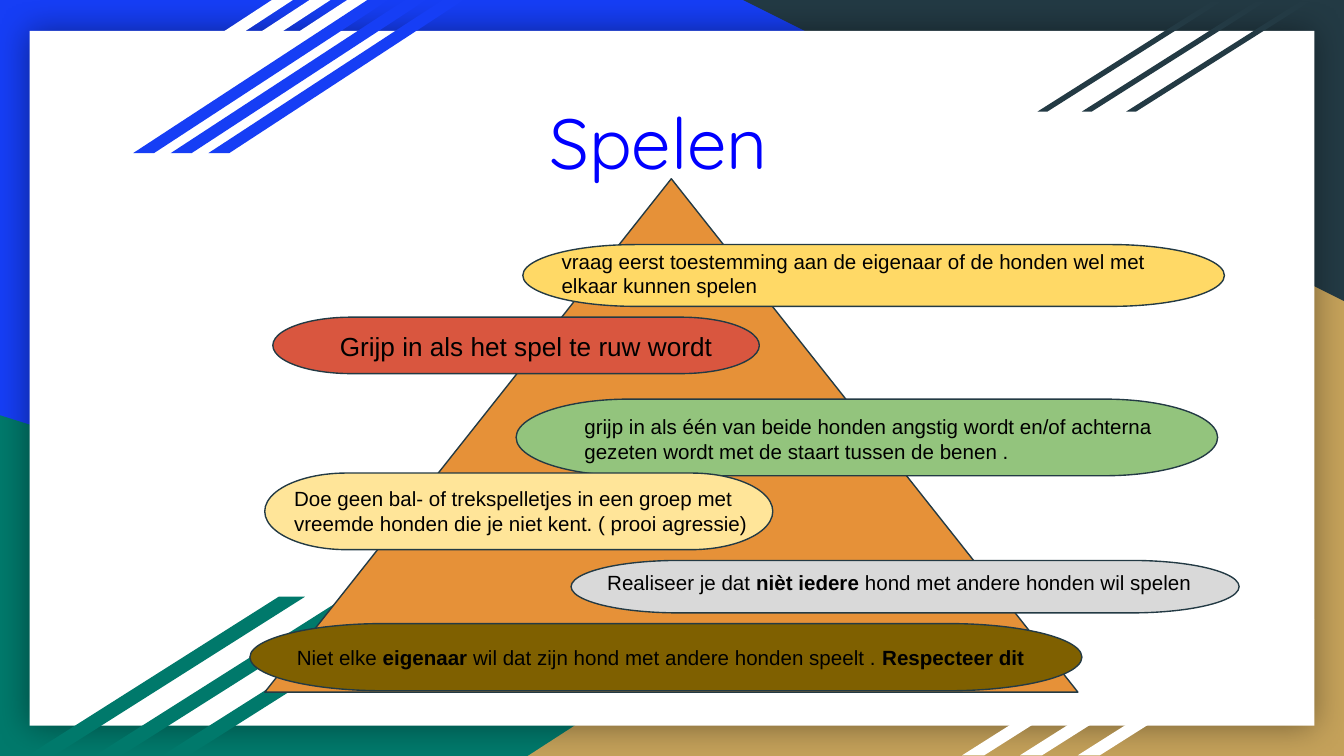
import pptx
import pptx.util
import pptx.dml.color
import pptx.enum.shapes
import pptx.enum.text
import pptx.oxml
import pptx.oxml.ns

Inches = pptx.util.Inches
Pt = pptx.util.Pt
RGBColor = pptx.dml.color.RGBColor
Kind = pptx.enum.shapes.MSO_SHAPE
Align = pptx.enum.text.PP_ALIGN
Anchor = pptx.enum.text.MSO_ANCHOR

BLUE = RGBColor(0x16, 0x3E, 0xF5)
TEAL = RGBColor(0x00, 0x79, 0x6B)
SAND = RGBColor(0xC4, 0xA1, 0x5A)
SLATE = RGBColor(0x23, 0x3A, 0x44)
WHITE = RGBColor(0xFF, 0xFF, 0xFF)
BLACK = RGBColor(0x00, 0x00, 0x00)
TITLE = RGBColor(0x00, 0x00, 0xFF)
ORANGE = RGBColor(0xE6, 0x91, 0x38)
YELLOW = RGBColor(0xFF, 0xD9, 0x66)
RED = RGBColor(0xD9, 0x56, 0x3F)
GREEN = RGBColor(0x93, 0xC4, 0x7D)
CREAM = RGBColor(0xFF, 0xE5, 0x99)
GREY = RGBColor(0xD9, 0xD9, 0xD9)
BROWN = RGBColor(0x7F, 0x60, 0x00)

# Widescreen slide, 16 to 9
deck = pptx.Presentation()
deck.slide_width = Inches(10)
deck.slide_height = Inches(10 * 9 / 16)
slide = deck.slides.add_slide(deck.slide_layouts[6])
slide.background.fill.solid()
slide.background.fill.fore_color.rgb = BLUE


def add_form(kind, box, fill, edge=None):
    form = slide.shapes.add_shape(kind, *[Inches(n) for n in box])
    form.shadow.inherit = False
    form.fill.solid()
    form.fill.fore_color.rgb = fill
    if edge is None:
        form.line.fill.background()
    else:
        form.line.color.rgb = edge
        form.line.width = Pt(0.75)
    return form


def add_text(box, text, font, size, color):
    """Write text in a box; parts between asterisks are bold."""
    frame = slide.shapes.add_textbox(*[Inches(n) for n in box]).text_frame
    frame.word_wrap = True
    frame.margin_left = frame.margin_right = Inches(0.1)
    frame.margin_top = frame.margin_bottom = Inches(0.1)
    para = frame.paragraphs[0]
    para.font.name = font
    para.font.size = Pt(size)
    para.font.color.rgb = color
    for i, part in enumerate(text.split("*")):
        if part:
            run = para.add_run()
            run.text = part
            if i % 2:
                run.font.bold = True
    return frame


# Coloured corners
add_form(Kind.RIGHT_TRIANGLE, (0, 3.09, 8.06, 2.54), TEAL)
sand = add_form(Kind.RIGHT_TRIANGLE, (3.92, 1.7, 6.08, 3.93), SAND)
sand.element.spPr.xfrm.set("flipH", "1")
slate = add_form(Kind.RIGHT_TRIANGLE, (5.53, 0, 4.47, 2.24), SLATE)
slate.rotation = 180

# White panel with a soft shadow
panel = add_form(Kind.RECTANGLE, (0.22, 0.23, 9.56, 5.17), WHITE)
glow = pptx.oxml.parse_xml(
    f'<a:outerShdw {pptx.oxml.ns.nsdecls("a")} blurRad="{Pt(18)}" dist="0" '
    'algn="ctr" rotWithShape="0"><a:srgbClr val="000000">'
    '<a:alpha val="40000"/></a:srgbClr></a:outerShdw>')
panel.element.spPr.find(pptx.oxml.ns.qn("a:effectLst")).append(glow)

# Slanted stripes, three to a group, from right to left
stripes = [
    (0.84, 0, 1.9, 1.14, 0.28, 1.53, WHITE),
    (1.55, 0, 1.9, 1.14, 0.28, 1.53, BLUE),
    (8.38, 0.01, 1.37, 0.82, 0.33, 1.58, SLATE),
    (8.02, 4.61, 1.76, 1.01, 0.43, 1.58, WHITE),
    (1.21, 4.44, 2.06, 1.18, 0.5, 1.58, TEAL),
]
for left, top, wide, high, step, slant, fill in stripes:
    for i in range(3):
        box = (left - i * step, top, wide, high)
        bar = add_form(Kind.PARALLELOGRAM, box, fill)
        bar.adjustments[0] = slant

# Title
title = add_text((1.97, 0.69, 5.86, 0.72), "Spelen", "Quicksand", 38, TITLE)
title.vertical_anchor = Anchor.MIDDLE
title.paragraphs[0].alignment = Align.CENTER

# Pyramid
add_form(Kind.ISOSCELES_TRIANGLE, (1.97, 1.33, 6.05, 3.82), ORANGE, SLATE)

# Rules of play: pill, colour, text box, size, text
rules = [
    ((3.89, 1.82, 5.22, 0.46), YELLOW, (4.08, 1.75, 4.97, 0.57), 11,
     "vraag eerst toestemming aan de eigenaar of de honden wel met "
     "elkaar kunnen spelen"),
    ((2.03, 2.36, 3.62, 0.42), RED, (2.43, 2.36, 3.02, 0.42), 14,
     "Grijp in als het spel te ruw wordt"),
    ((3.84, 2.97, 5.22, 0.57), GREEN, (4.25, 2.98, 4.64, 0.46), 11,
     "grijp in als één van beide honden angstig wordt en/of achterna "
     "gezeten wordt met de staart tussen de benen ."),
    ((1.97, 3.52, 3.78, 0.57), CREAM, (2.09, 3.52, 3.7, 0.57), 11,
     "Doe geen bal- of trekspelletjes in een groep met vreemde honden "
     "die je niet kent. ( prooi agressie)"),
    ((4.25, 4.17, 4.97, 0.39), GREY, (4.42, 4.15, 4.63, 0.5), 11,
     "Realiseer je dat *nièt iedere* hond met andere honden wil spelen"),
    ((1.86, 4.64, 6.19, 0.5), BROWN, (2.11, 4.71, 5.79, 0.42), 11,
     "Niet elke* eigenaar* wil dat zijn hond met andere honden speelt . "
     "*Respecteer dit*"),
]
for pill, fill, box, size, text in rules:
    add_form(Kind.FLOWCHART_TERMINATOR, pill, fill, SLATE)
    add_text(box, text, "Arial", size, BLACK)

deck.save("out.pptx")
